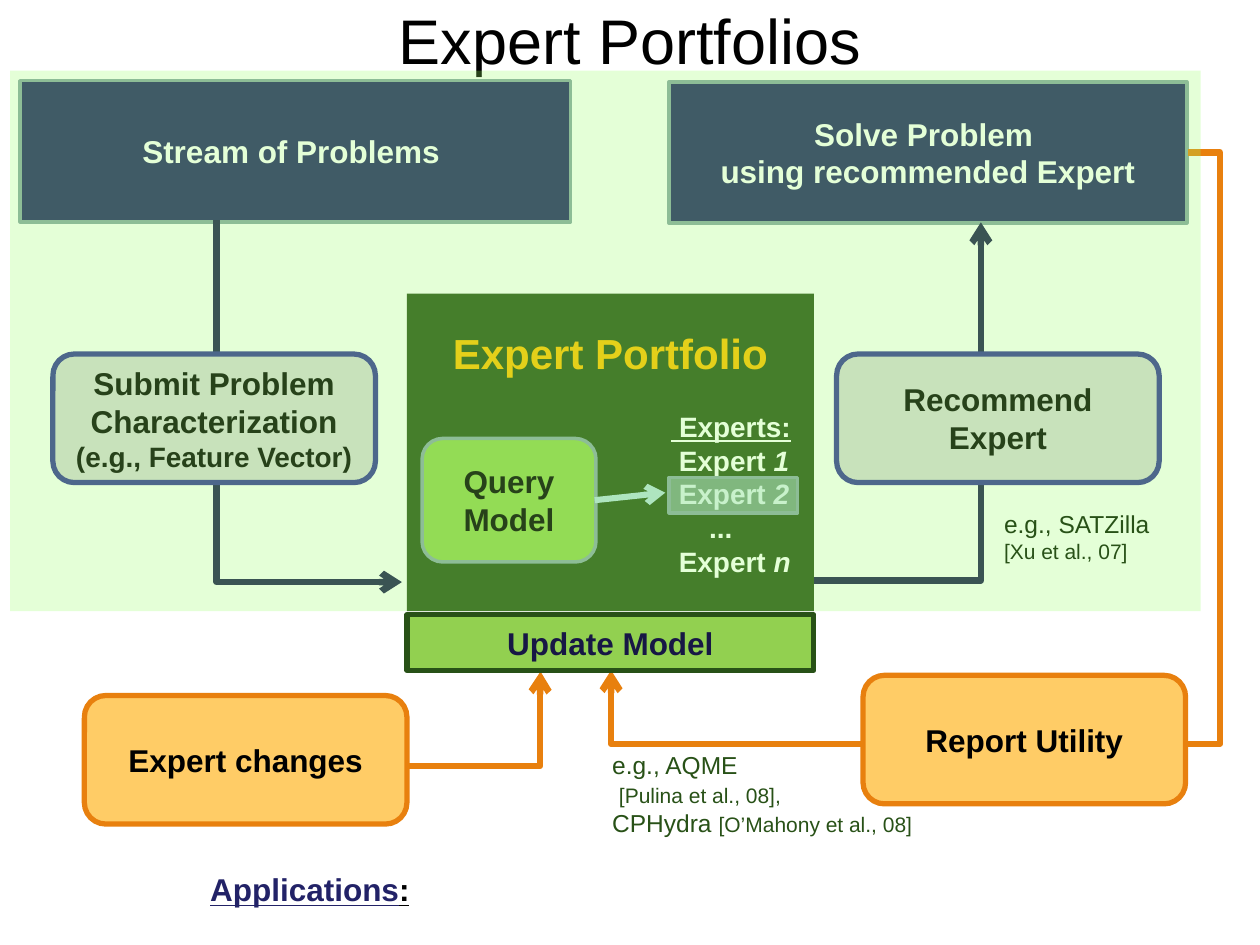
import pptx
import pptx.dml.color
import pptx.enum.shapes
import pptx.enum.text
import pptx.oxml
import pptx.oxml.ns
import pptx.util
from lxml import etree
from pptx.util import Inches

COLORS = {
    "black": "000000", "white": "FFFFFF", "navy": "222267", "ink": "171745",
    "line_navy": "19194D", "steel": "8AA6A8", "indigo": "333399", "gray": "D9D9D9",
    "forest": "285117", "lime": "92D050", "tint": "99FF66", "gold": "FFC000",
    "orange": "E8800E", "peach": "FFCC66", "aqua": "BBE0E3", "pale_aqua": "B6DCDF",
}
SHAPES = pptx.enum.shapes.MSO_SHAPE
CONNECTORS = pptx.enum.shapes.MSO_CONNECTOR
ANCHORS = pptx.enum.text.MSO_ANCHOR
ALIGN = pptx.enum.text.PP_ALIGN
qn = pptx.oxml.ns.qn

presentation = pptx.Presentation()
presentation.slide_width, presentation.slide_height = Inches(10), Inches(7.5)
slide = presentation.slides.add_slide(presentation.slide_layouts[6])


def rgb(name):
    return pptx.dml.color.RGBColor.from_string(COLORS[name])


def write(shape, runs, size=18, color="black", bold=True, align=ALIGN.CENTER,
          first=False, indent=0, before=0):
    """Add one paragraph; each run is a text or a (text, format overrides) pair."""
    frame = shape.text_frame
    paragraph = frame.paragraphs[0] if first else frame.add_paragraph()
    paragraph.alignment = align
    paragraph.space_before = pptx.util.Pt(before)
    if indent:
        paragraph._p.get_or_add_pPr().set("marL", str(Inches(indent)))
    for item in [runs] if isinstance(runs, str) else runs:
        text, changes = (item, {}) if isinstance(item, str) else item
        run = paragraph.add_run()
        run.text = text
        run.font.name = "Arial"
        run.font.size = pptx.util.Pt(changes.get("size", size))
        run.font.bold = bold
        run.font.italic = changes.get("italic", False)
        run.font.underline = changes.get("underline", False)
        run.font.color.rgb = rgb(changes.get("color", color))


def add_box(kind, box, fill, line=None, width=2, opacity=100):
    shape = slide.shapes.add_shape(kind, *map(Inches, box))
    shape.shadow.inherit = False
    shape.fill.solid()
    shape.fill.fore_color.rgb = rgb(fill)
    if opacity < 100:
        color = shape._element.spPr.find(".//" + qn("a:srgbClr"))
        etree.SubElement(color, qn("a:alpha"), val=str(opacity * 1000))
    if line:
        shape.line.color.rgb = rgb(line)
        shape.line.width = pptx.util.Pt(width)
    else:
        shape.line.fill.background()
    shape.text_frame.word_wrap = True
    shape.text_frame.vertical_anchor = ANCHORS.MIDDLE
    return shape


# Title
title = slide.shapes.add_textbox(*map(Inches, (0, -0.31, 10, 1.25)))
title.text_frame.word_wrap = True
title.text_frame.vertical_anchor = ANCHORS.MIDDLE
write(title, "Expert Portfolios", size=36, bold=False, first=True)

# Problem boxes
stream = add_box(SHAPES.RECTANGLE, (0.16, 0.64, 4.37, 1.12), "navy", "steel")
write(stream, "Stream of Problems ", color="white", first=True)
solve = add_box(SHAPES.RECTANGLE, (5.31, 0.65, 4.11, 1.12), "navy", "steel")
write(solve, "Solve Problem ", color="white", first=True)
write(solve, "using recommended Expert", color="white")

# Arrows: unrotated frame, rotation, flips, preset, adjustments, colour, width
arrows = [
    ((1.02, 2.45, 2.87, 1.47), 270, "H", "bentConnector3", [100000], "line_navy", 3.75),
    ((5.69, 2.52, 2.85, 1.34), 90, "HV", "bentConnector3", [300], "line_navy", 3.75),
    ((4.85, 1.21, 4.58, 4.11), 0, "H", "bentConnector4", [-5500, 114200], "orange", 3.75),
    ((2.99, 5.33, 1.3, 0.75), 0, "V", "bentConnector3", [99700], "orange", 3.75),
    ((4.72, 3.91, 0.56, 0.06), 0, "V", "line", [], "pale_aqua", 3.5),
]
arrow_elements = []
for (left, top, width, height), rotation, flips, preset, adjustments, color, weight in arrows:
    connector = slide.shapes.add_connector(
        CONNECTORS.ELBOW, *map(Inches, (left, top, left + width, top + height)))
    connector.line.color.rgb = rgb(color)
    connector.line.width = pptx.util.Pt(weight)
    properties = connector._element.spPr
    transform = properties.find(qn("a:xfrm"))
    transform.set("rot", str(rotation * 60000))
    for flip in flips:
        transform.set("flip" + flip, "1")
    geometry = properties.find(qn("a:prstGeom"))
    geometry.set("prst", preset)
    guides = geometry.find(qn("a:avLst"))
    for number, value in enumerate(adjustments, 1):
        etree.SubElement(guides, qn("a:gd"), name=f"adj{number}", fmla=f"val {value}")
    etree.SubElement(properties.find(qn("a:ln")), qn("a:tailEnd"), type="arrow")
    etree.SubElement(properties, qn("a:effectLst"))
    arrow_elements.append(connector._element)

# Portfolio and its list of experts
update = add_box(SHAPES.RECTANGLE, (3.23, 4.88, 3.23, 0.44), "lime", "forest", 3)
write(update, "Update Model", color="ink", first=True)
portfolio = add_box(SHAPES.RECTANGLE, (3.23, 2.33, 3.23, 2.52), "forest")
write(portfolio, "Expert Portfolio", size=24, color="gold", first=True)
experts = [
    ([(" Experts:", {"underline": True})], 2, 18.5),
    (["Expert ", ("1", {"italic": True})], 2.06, 0),
    (["Expert ", ("2", {"italic": True})], 2.06, 0),
    ("...", 2.3, 0),
    (["Expert ", ("n", {"italic": True})], 2.06, 0),
]
for runs, indent, before in experts:
    write(portfolio, runs, size=16, color="white", align=ALIGN.LEFT,
          indent=indent, before=before)

# Rounded step boxes
steps = [
    ((0.42, 2.81, 2.56, 1.02), "gray", "indigo", 3, "Submit Problem Characterization"),
    ((6.64, 2.81, 2.56, 1.02), "gray", "indigo", 3, "Recommend Expert"),
    ((3.35, 3.48, 1.38, 0.98), "lime", "steel", 2, "Query Model"),
    ((6.85, 5.36, 2.56, 1.02), "peach", "orange", 3, "Report Utility"),
    ((0.67, 5.52, 2.56, 1.02), "peach", "orange", 3, "Expert changes"),
]
for box, fill, line, width, text in steps:
    step = add_box(SHAPES.ROUNDED_RECTANGLE, box, fill, line, width)
    write(step, text, first=True)
    if text.startswith("Submit"):
        write(step, "(e.g., Feature Vector)", size=16)

# Highlight of the chosen expert, with the query arrow above the portfolio
add_box(SHAPES.RECTANGLE, (5.31, 3.79, 1.02, 0.28), "aqua", "steel", opacity=55)
slide.shapes._spTree.append(arrow_elements[-1])

# Tinted band over the solving loop
add_box(SHAPES.RECTANGLE, (0.08, 0.56, 9.45, 4.29), "tint", opacity=26)

# Notes beside the diagram
small = {"size": 12}
notes = [
    ((1.57, 6.86, 1.8, 0.4), 18, "navy", True,
     [[("Applications", {"underline": True}), (":", {"underline": True, "color": "black"})]]),
    ((7.87, 3.99, 1.69, 0.54), 14, "forest", False,
     ["e.g., SATZilla", [("[Xu et al., 07]", small)]]),
    ((4.76, 5.9, 2.95, 0.81), 14, "forest", False,
     ["e.g., AQME", [" ", ("[Pulina et al., 08],", small)],
      ["CPHydra ", ("[O’Mahony et al., 08]", small)]]),
]
for box, size, color, bold, lines in notes:
    note = slide.shapes.add_textbox(*map(Inches, box))
    note.text_frame.word_wrap = not bold
    for number, runs in enumerate(lines):
        write(note, runs, size=size, color=color, bold=bold,
              align=ALIGN.LEFT, first=number == 0)

presentation.save("out.pptx")
